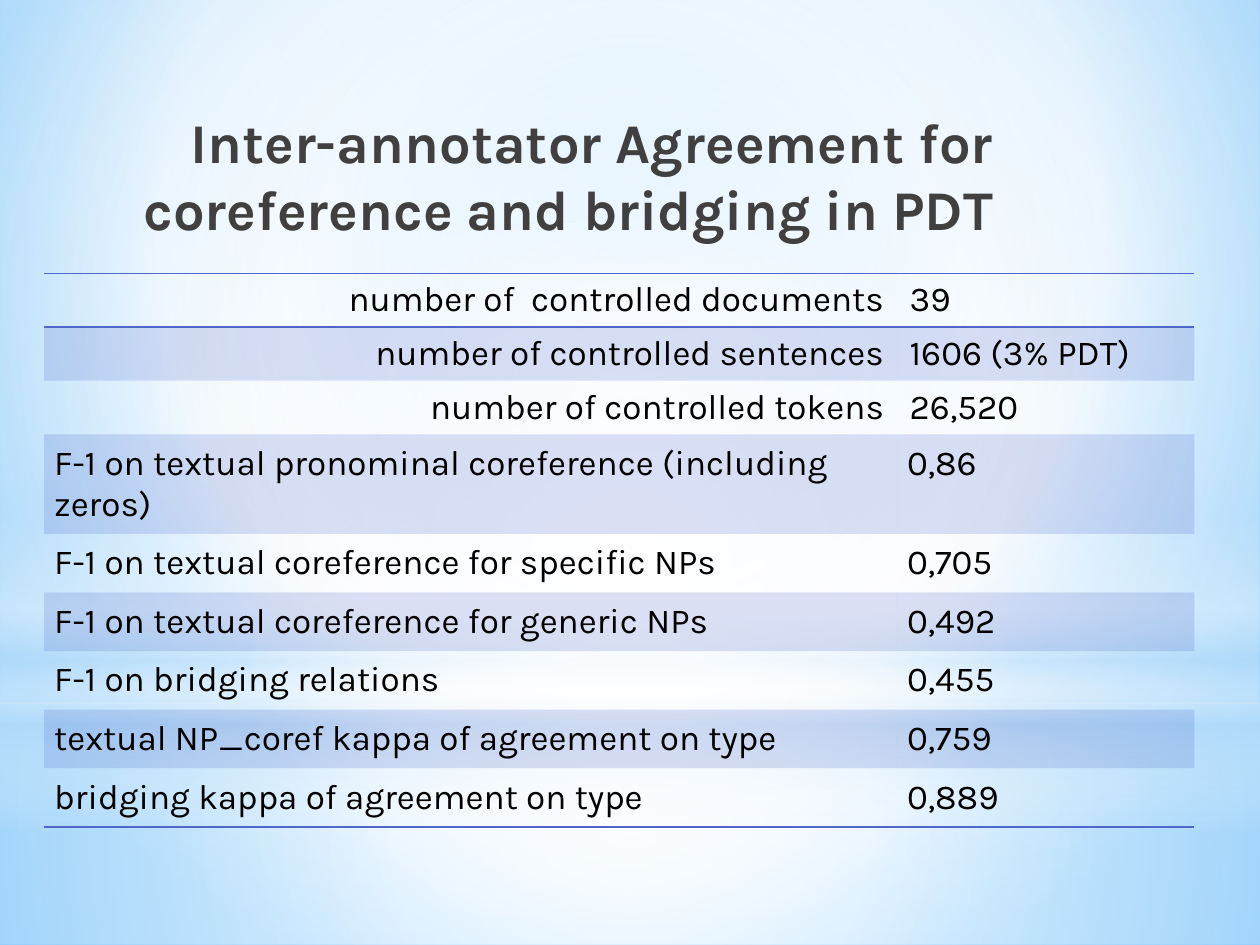
"""Build a slide with inter-annotator agreement figures in a banded table."""
from dataclasses import dataclass

from lxml import etree
from pptx import Presentation
from pptx.dml.color import RGBColor
from pptx.enum import shapes, text
from pptx.oxml import ns
from pptx.util import Inches, Pt


@dataclass(frozen=True)
class Theme:
    font: str = "Karla"
    title_size: int = 32
    body_size: int = 20
    title_color: str = "404040"
    body_color: str = "000000"
    accent: str = "4E67C8"
    band_opacity: int = 20
    white: str = "FFFFFF"
    sky: str = "B4DCFA"
    light_blue: str = "9ED5FF"
    deep_blue: str = "5BB9FF"


THEME = Theme()
NO_STYLE = "{2D5ABB26-0587-4C30-8999-92F81FD0307C}"
CENTER = (50, 50, 50, 50)
BACKGROUND_STOPS = [(0, THEME.light_blue, 100), (60, THEME.white, 100), (100, THEME.deep_blue, 100)]
GLOWS = [
    ("RECTANGLE", (0, 5.58, 10, 1.92), CENTER,
     [(0, THEME.white, 91), (37, THEME.white, 76), (100, THEME.sky, 79)]),
    ("RECTANGLE", (0, 0, 10, 5.58), CENTER,
     [(0, THEME.white, 89), (48, THEME.white, 62), (100, THEME.sky, 79)]),
    ("RECTANGLE", (0, 4.12, 10, 2.5), None,
     [(0, THEME.white, 0), (29, THEME.white, 30), (45, THEME.sky, 40),
      (55, THEME.white, 26), (65, THEME.sky, 60), (100, THEME.white, 0)]),
    ("OVAL", (0, 1.75, 10, 5.58), CENTER, [(0, THEME.white, 100), (56, THEME.white, 0)]),
]
COUNTS = [
    ("number of  controlled documents", "39"),
    ("number of controlled sentences", "1606 (3% PDT)"),
    ("number of controlled tokens", "26,520"),
]
SCORES = [
    ("F-1 on textual pronominal coreference (including zeros)", "0,86"),
    ("F-1 on textual coreference for specific NPs", "0,705"),
    ("F-1 on textual coreference for generic NPs", "0,492"),
    ("F-1 on bridging relations", "0,455"),
    ("textual NP_coref kappa of agreement on type", "0,759"),
    ("bridging kappa of agreement on type", "0,889"),
]


def add_node(parent, tag, **attributes):
    """Append a DrawingML element and return it."""
    values = {name: str(value) for name, value in attributes.items()}
    return etree.SubElement(parent, ns.qn(f"a:{tag}"), values)


def set_gradient(fill, properties, stops, focus):
    """Give a fill a circular gradient around focus, or a vertical one without focus."""
    fill.gradient()
    gradient = properties.find(ns.qn("a:gradFill"))
    for child in list(gradient):
        gradient.remove(child)
    stop_list = add_node(gradient, "gsLst")
    for position, color, opacity in stops:
        stop = add_node(stop_list, "gs", pos=position * 1000)
        add_node(add_node(stop, "srgbClr", val=color), "alpha", val=opacity * 1000)
    if focus:
        circle = add_node(gradient, "path", path="circle")
        sides = {side: value * 1000 for side, value in zip("ltrb", focus)}
        add_node(circle, "fillToRect", **sides)
    else:
        add_node(gradient, "lin", ang=90 * 60000, scaled=0)


def set_background(slide):
    """Fill the slide background with its radial gradient."""
    fill = slide.background.fill
    fill.solid()
    properties = slide.element.find(".//" + ns.qn("p:bgPr"))
    set_gradient(fill, properties, BACKGROUND_STOPS, (20, 10, 20, 60))


def add_glow(slide, kind, box, focus, stops):
    """Add one translucent gradient layer."""
    shape = slide.shapes.add_shape(shapes.MSO_SHAPE[kind], *map(Inches, box))
    shape.shadow.inherit = False
    shape.line.fill.background()
    set_gradient(shape.fill, shape.element.spPr, stops, focus)


def format_runs(paragraph, size, color, bold=False):
    """Apply the theme font to every run of a paragraph."""
    for run in paragraph.runs:
        run.font.name = THEME.font
        run.font.size = Pt(size)
        run.font.bold = bold
        run.font.color.rgb = RGBColor.from_string(color)


def set_title(slide, words):
    """Place and format the title above the background layers."""
    title = slide.shapes.title
    slide.shapes.element.append(title.element)
    title.left, title.top, title.width, title.height = map(Inches, (0.43, 0.76, 7.56, 1.25))
    frame = title.text_frame
    frame.text = words
    frame.word_wrap = True
    frame.auto_size = text.MSO_AUTO_SIZE.NONE
    frame.vertical_anchor = text.MSO_ANCHOR.MIDDLE
    paragraph = frame.paragraphs[0]
    paragraph.alignment = text.PP_ALIGN.RIGHT
    format_runs(paragraph, THEME.title_size, THEME.title_color, bold=True)


def set_border(cell, tag):
    """Draw one accent line along a side of a cell."""
    line = add_node(cell._tc.get_or_add_tcPr(), tag, w=Pt(1))
    add_node(add_node(line, "solidFill"), "srgbClr", val=THEME.accent)


def fill_cell(cell, banded):
    """Tint a banded cell and leave any other one clear."""
    if not banded:
        cell.fill.background()
        return
    cell.fill.solid()
    cell.fill.fore_color.rgb = RGBColor.from_string(THEME.accent)
    color = cell._tc.tcPr.find(".//" + ns.qn("a:srgbClr"))
    add_node(color, "alpha", val=THEME.band_opacity * 1000)


def write_cell(cell, words, is_count, is_label):
    """Write a cell with the margins and alignment of its row group."""
    side, edge = (0.1, 0.05) if is_count else (0.08, 0.07)
    cell.margin_left = cell.margin_right = Inches(side)
    cell.margin_top = cell.margin_bottom = Inches(edge)
    cell.text_frame.text = words
    paragraph = cell.text_frame.paragraphs[0]
    if is_count and is_label:
        paragraph.alignment = text.PP_ALIGN.RIGHT
    if not is_count:
        paragraph.space_after = Pt(5.8)
    format_runs(paragraph, THEME.body_size, THEME.body_color)


def add_agreement_table(slide):
    """Add the table of counts and agreement scores."""
    rows = COUNTS + SCORES
    box = (0.35, 2.17, 9.13, 0.41 * len(rows))
    table = slide.shapes.add_table(len(rows), 2, *map(Inches, box)).table
    table.first_row = table.horz_banding = False
    table._tbl.tblPr.find(ns.qn("a:tableStyleId")).text = NO_STYLE
    for column, width in zip(table.columns, (6.77, 2.36)):
        column.width = Inches(width)
    for row_index, row in enumerate(rows):
        for column_index, words in enumerate(row):
            cell = table.cell(row_index, column_index)
            write_cell(cell, words, row_index < len(COUNTS), column_index == 0)
            if row_index == 0:
                set_border(cell, "lnT")
            if row_index in (0, len(rows) - 1):
                set_border(cell, "lnB")
            fill_cell(cell, row_index % 2 == 1)


def main():
    """Build and save the presentation."""
    presentation = Presentation()
    presentation.slide_width, presentation.slide_height = Inches(10), Inches(7.5)
    slide = presentation.slides.add_slide(presentation.slide_layouts[5])
    set_background(slide)
    for kind, box, focus, stops in GLOWS:
        add_glow(slide, kind, box, focus, stops)
    set_title(slide, "Inter-annotator Agreement for coreference and bridging in PDT")
    add_agreement_table(slide)
    presentation.save("out.pptx")


if __name__ == "__main__":
    main()
